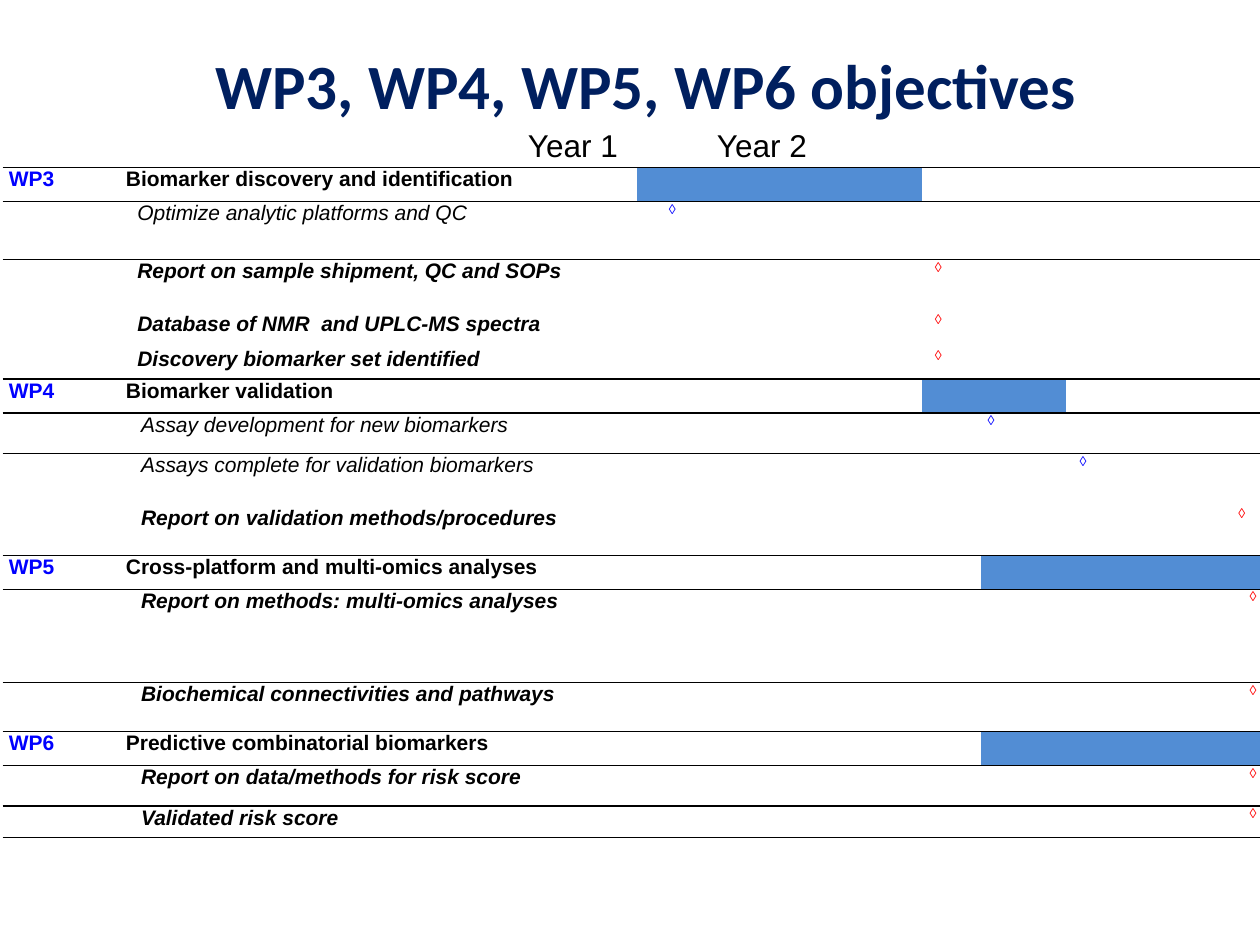
from dataclasses import dataclass
from typing import Optional

import pptx
import pptx.dml.color
import pptx.oxml
import pptx.oxml.ns
import pptx.util
from pptx.util import Inches

RGBColor = pptx.dml.color.RGBColor
BLACK = RGBColor(0x00, 0x00, 0x00)
NAVY = RGBColor(0x00, 0x1F, 0x5F)
BLUE = RGBColor(0x00, 0x00, 0xFF)
RED = RGBColor(0xFF, 0x00, 0x00)
BAR = RGBColor(0x52, 0x8D, 0xD4)

NO_STYLE_NO_GRID = "{2D5ABB26-0587-4C30-8999-92F81FD0307C}"
COLUMNS = [0.64, 3.86, 0.54, 0.67, 0.44, 0.25, 0.9, 0.25, 0.22, 0.67, 0.87, 0.68]


@dataclass
class Package:
    """A work package heading with a bar over columns first to last."""
    height: float
    code: str
    name: str
    first: int
    last: int


@dataclass
class Task:
    """A task whose diamond stands in a column, offset inches from its left."""
    height: float
    name: str
    indent: float
    column: int
    offset: float
    report: bool = True


ROWS = [
    Package(0.27, "WP3", "Biomarker discovery and identification", 3, 6),
    Task(0.46, "Optimize analytic platforms and QC", 0.43, 3, 0.25, report=False),
    Task(0.42, "Report on sample shipment, QC and SOPs", 0.43, 7, 0.1),
    Task(0.28, "Database of NMR  and UPLC-MS spectra", 0.43, 7, 0.1),
    Task(0.25, "Discovery biomarker set identified", 0.43, 7, 0.1),
    Package(0.27, "WP4", "Biomarker validation", 7, 9),
    Task(0.32, "Assay development for new biomarkers", 0.46, 9, 0.05, report=False),
    Task(0.42, "Assays complete for validation biomarkers", 0.46, 10, 0.11, report=False),
    Task(0.39, "Report on validation methods/procedures", 0.46, 11, 0.5),
    Package(0.27, "WP5", "Cross-platform and multi-omics analyses", 9, 11),
    Task(0.74, "Report on methods: multi-omics analyses", 0.46, 11, 0.59),
    Task(0.39, "Biochemical connectivities and pathways", 0.46, 11, 0.59),
    Package(0.27, "WP6", "Predictive combinatorial biomarkers", 9, 11),
    Task(0.32, "Report on data/methods for risk score", 0.46, 11, 0.59),
    Task(0.25, "Validated risk score", 0.46, 11, 0.59),
]


def set_font(p, name: str, size: float, color: RGBColor,
             bold: bool = False, italic: bool = False) -> None:
    f = p.font
    f.name, f.size, f.bold, f.italic = name, pptx.util.Pt(size), bold, italic
    f.color.rgb = color


def add_label(s, text: str, box: tuple, margins: tuple, *font) -> None:
    """Add a text box; margins are left and top, font goes to set_font."""
    tf = s.shapes.add_textbox(*map(Inches, box)).text_frame
    tf.word_wrap = True
    tf.margin_left, tf.margin_top = map(Inches, margins)
    tf.margin_right = tf.margin_bottom = 0
    p = tf.paragraphs[0]
    p.text = text
    set_font(p, *font)


def write(cell, text: str, left: float, *font) -> None:
    cell.margin_left = Inches(left)
    p = cell.text_frame.paragraphs[0]
    p.text = text
    set_font(p, *font)


def add_rule(cell, tag: str) -> None:
    """Draw a 1 pt black border; tag is lnT or lnB."""
    cell._tc.get_or_add_tcPr().append(pptx.oxml.parse_xml(
        f'<a:{tag} {pptx.oxml.ns.nsdecls("a")} w="12700"><a:solidFill>'
        f'<a:srgbClr val="{BLACK}"/></a:solidFill></a:{tag}>'))


def is_package(i: int) -> bool:
    return 0 <= i < len(ROWS) and isinstance(ROWS[i], Package)


def prepare_cell(cell, i: int, fill: Optional[RGBColor]) -> None:
    """Clear margins, rule above and below packages, and fill the cell."""
    cell.margin_left = cell.margin_right = cell.margin_top = cell.margin_bottom = 0
    set_font(cell.text_frame.paragraphs[0], "Times New Roman", 8, BLACK)
    if is_package(i) or is_package(i - 1):
        add_rule(cell, "lnT")
    if is_package(i) or is_package(i + 1) or i == len(ROWS) - 1:
        add_rule(cell, "lnB")
    if fill is None:
        cell.fill.background()
    else:
        cell.fill.solid()
        cell.fill.fore_color.rgb = fill


def add_schedule(s) -> None:
    heights = [row.height for row in ROWS]
    frame = s.shapes.add_table(len(ROWS), len(COLUMNS), Inches(0.02), Inches(1.33),
                               Inches(sum(COLUMNS)), Inches(sum(heights)))
    table = frame.table
    table.first_row = table.horz_banding = False
    table._tbl.tblPr.find(pptx.oxml.ns.qn("a:tableStyleId")).text = NO_STYLE_NO_GRID
    for column, width in zip(table.columns, COLUMNS):
        column.width = Inches(width)
    for i, row in enumerate(ROWS):
        table.rows[i].height = Inches(row.height)
        package = isinstance(row, Package)
        for j in range(len(COLUMNS)):
            in_bar = package and row.first <= j <= row.last
            prepare_cell(table.cell(i, j), i, BAR if in_bar else None)
        if package:
            write(table.cell(i, 0), row.code, 0.05, "Arial", 12, BLUE, True)
            write(table.cell(i, 1), row.name, 0.34, "Arial", 12, BLACK, True)
        else:
            write(table.cell(i, 1), row.name, row.indent,
                  "Arial", 12, BLACK, row.report, True)
            write(table.cell(i, row.column), "◊", row.offset,
                  "Times New Roman", 8, RED if row.report else BLUE, row.report)


def main() -> None:
    prs = pptx.Presentation()
    prs.slide_width, prs.slide_height = Inches(10), Inches(7.5)
    s = prs.slides.add_slide(prs.slide_layouts[6])
    add_label(s, "WP3, WP4, WP5, WP6 objectives", (-0.75, 0.17, 10.17, 0.57),
              (2.46, 0.2), "Calibri", 36, NAVY, True)
    add_label(s, "\t\t\tYear 1\t\tYear 2", (0.67, 1, 9.33, 5.42),
              (2.02, 0), "Arial", 18, BLACK)
    add_schedule(s)
    prs.save("out.pptx")


if __name__ == "__main__":
    main()
